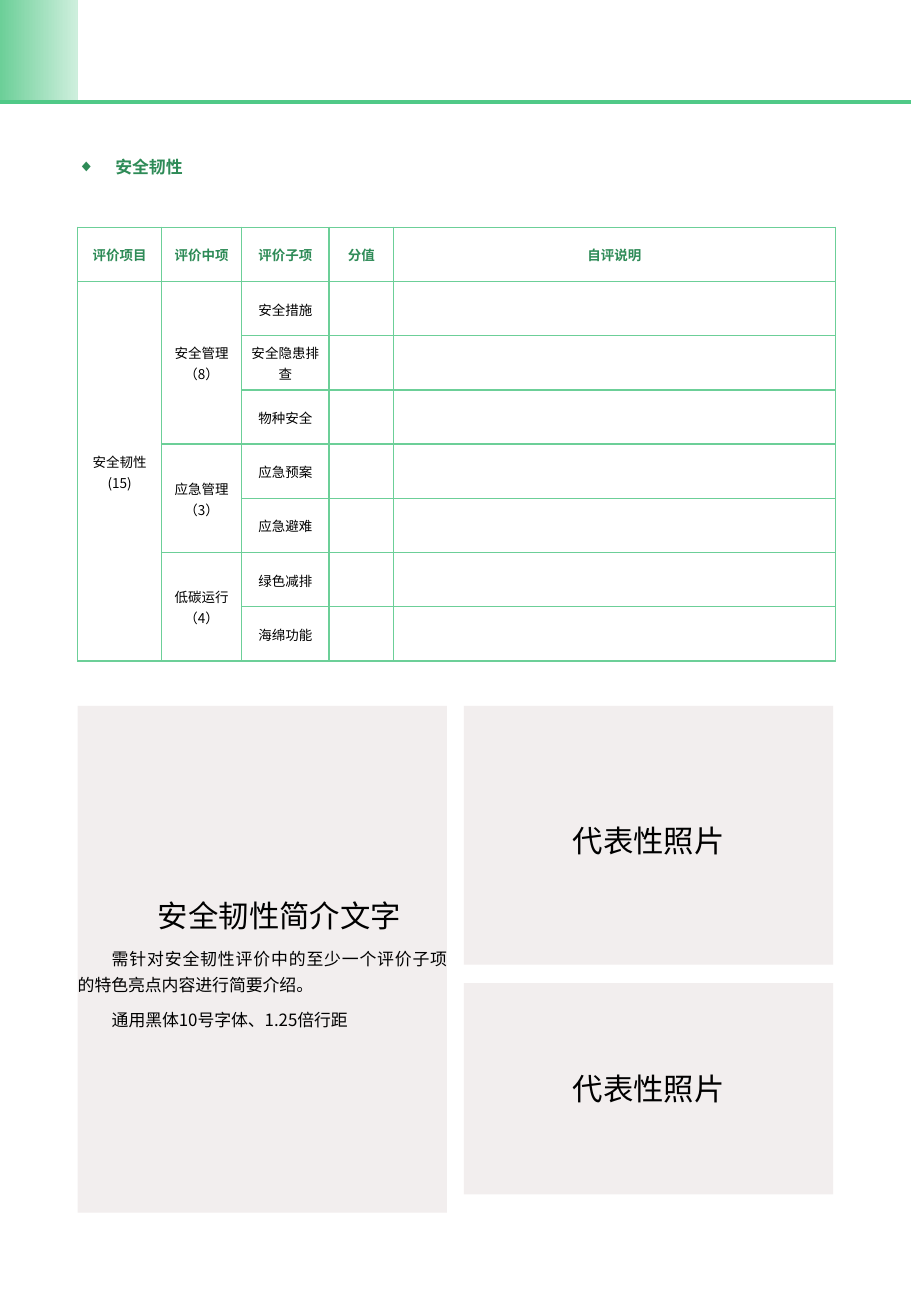
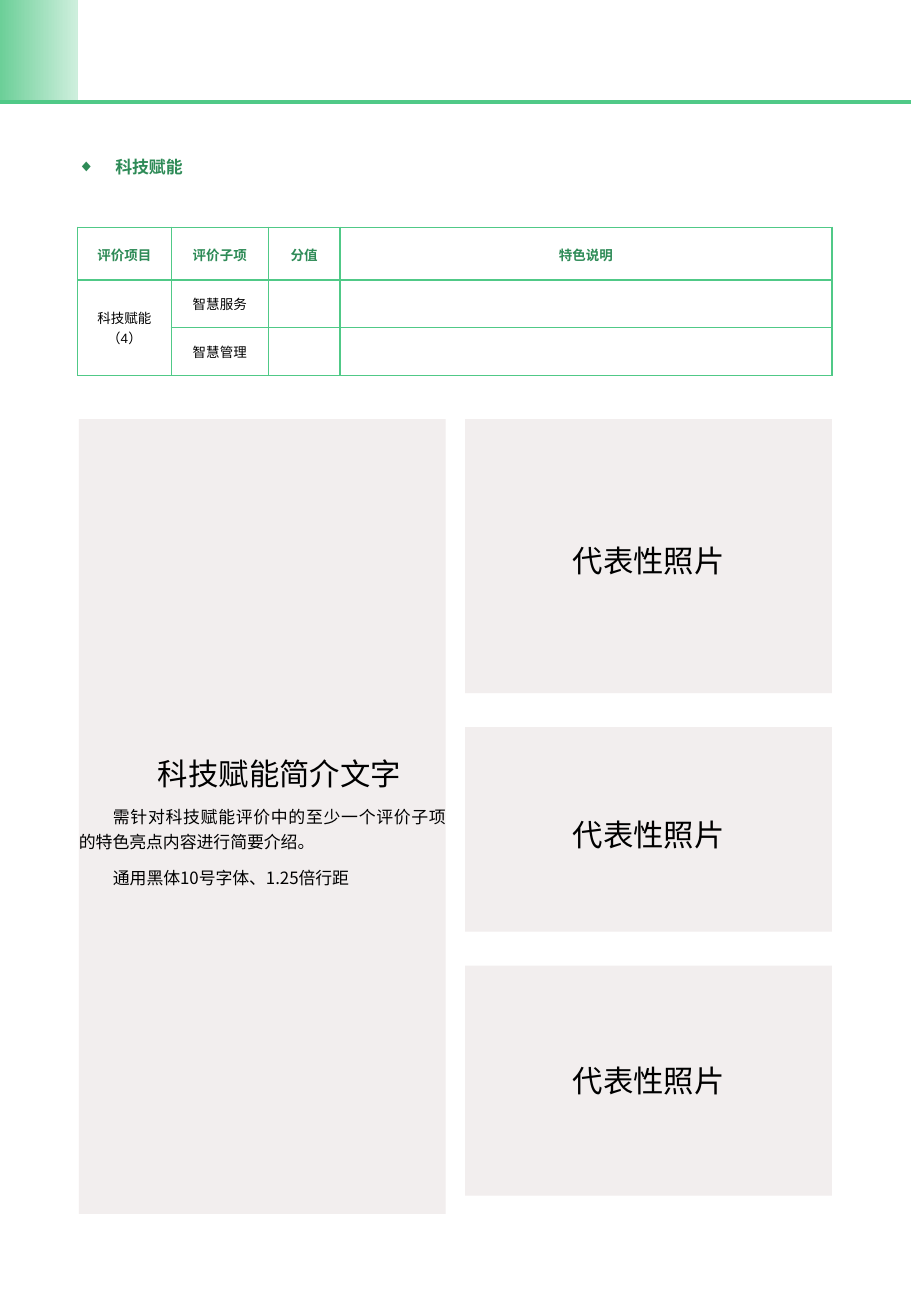
from lxml import etree
from pptx import Presentation
from pptx.dml.color import RGBColor
from pptx.enum.shapes import MSO_CONNECTOR, MSO_SHAPE
from pptx.enum.text import MSO_ANCHOR, MSO_AUTO_SIZE, PP_ALIGN
from pptx.oxml.ns import qn
from pptx.util import Inches, Pt

RECT = MSO_SHAPE.RECTANGLE
STRAIGHT = MSO_CONNECTOR.STRAIGHT
MIDDLE = MSO_ANCHOR.MIDDLE
GROW = MSO_AUTO_SIZE.SHAPE_TO_FIT_TEXT
CENTER, JUSTIFY = PP_ALIGN.CENTER, PP_ALIGN.JUSTIFY

PAGE_W, PAGE_H = 7.5, 10.83
MARGIN = 0.64
BAND_H = 0.84
TITLE_TOP, TABLE_TOP = 1.25, 1.87
PHOTO_INSET = 0.15
FONT, LATIN_FONT = "Noto Sans CJK SC", "Arial"
BLACK, TITLE_GREEN, RULE_GREEN = "000000", "2E8B57", "50C987"
BAND_GREEN, PALE_GREEN, PANEL = "6CCF98", "CEEFDD", "F2EEEE"

ZERO_INSETS = dict(margin_left=0, margin_right=0, margin_top=0, margin_bottom=0)
CELL_FORMAT = dict(margin_left=Inches(0.07), margin_right=Inches(0.07),
                   margin_top=Inches(0.05), margin_bottom=Inches(0.05),
                   vertical_anchor=MIDDLE)
SPACED = dict(line_spacing=1.25, space_after=Pt(6))
PHOTO_PLAIN = dict(alignment=CENTER)
PHOTO_SPACED = dict(alignment=CENTER, **SPACED)
INTRO_HEADING = dict(alignment=CENTER, **SPACED)
INTRO_BODY = dict(alignment=JUSTIFY, **SPACED)
TITLE_FORMAT = dict(alignment=JUSTIFY, line_spacing=1.25, space_after=Pt(12))


def color(value):
    return RGBColor.from_string(value)


def apply(target, settings):
    for key, value in settings.items():
        setattr(target, key, value)


def inches(box):
    return [Inches(length) for length in box]


def indent(paragraph, left, first):
    props = paragraph._p.get_or_add_pPr()
    props.set("marL", str(Inches(left)))
    props.set("indent", str(Inches(first)))


def write(paragraph, text, settings, size, ink=BLACK, bold=False, latin=FONT):
    apply(paragraph, settings)
    run = paragraph.add_run()
    run.text = text
    apply(run.font, dict(size=Pt(size), bold=bold, name=latin))
    run.font.color.rgb = color(ink)
    east_asian = etree.SubElement(run._r.get_or_add_rPr(), qn("a:ea"))
    east_asian.set("typeface", FONT)


def header_band(slide):
    band = slide.shapes.add_shape(RECT, *inches((0, 0, MARGIN, BAND_H)))
    band.shadow.inherit = False
    band.line.fill.background()
    band.fill.gradient()
    band.fill.gradient_angle = 0
    for stop, shade in zip(band.fill.gradient_stops, (BAND_GREEN, PALE_GREEN)):
        stop.color.rgb = color(shade)
    rule = slide.shapes.add_connector(
        STRAIGHT, *inches((-0.01, BAND_H, PAGE_W + 0.02, BAND_H)))
    rule.line.color.rgb = color(RULE_GREEN)
    rule.line.width = Pt(2.5)
    etree.SubElement(rule._element.spPr, qn("a:effectLst"))


def section_title(slide, box, text):
    frame = slide.shapes.add_textbox(*inches(box)).text_frame
    apply(frame, dict(word_wrap=True, auto_size=GROW, **ZERO_INSETS))
    paragraph = frame.paragraphs[0]
    indent(paragraph, 0.31, -0.31)
    props = paragraph._p.get_or_add_pPr()
    for tag, key, value in (("a:buFont", "typeface", LATIN_FONT),
                            ("a:buChar", "char", "◆")):
        etree.SubElement(props, qn(tag)).set(key, value)
    write(paragraph, text, TITLE_FORMAT, 10, TITLE_GREEN, True)


def border(cell, shade):
    props = cell._tc.get_or_add_tcPr()
    for side in ("L", "R", "T", "B"):
        edge = etree.SubElement(props, qn("a:ln" + side), w=str(Pt(1)))
        solid = etree.SubElement(edge, qn("a:solidFill"))
        etree.SubElement(solid, qn("a:srgbClr"), val=shade)


def fill_cell(cell, text, is_header, body):
    apply(cell, CELL_FORMAT)
    border(cell, body["edge"])
    cell.fill.background()
    frame = cell.text_frame
    if not text:
        end = etree.SubElement(frame.paragraphs[0]._p, qn("a:endParaRPr"))
        end.set("sz", "800")
        return
    spacing = 1.07 if is_header else body["spacing"]
    for number, line in enumerate(text.split("\n")):
        paragraph = frame.add_paragraph() if number else frame.paragraphs[0]
        write(paragraph, line, dict(alignment=CENTER, line_spacing=spacing), 8,
              TITLE_GREEN if is_header else BLACK, is_header,
              FONT if is_header else body["latin"])


def score_table(slide, box, col_weights, row_weights, rows, body):
    width, height = box[2:]
    table = slide.shapes.add_table(len(rows), len(col_weights), *inches(box)).table
    apply(table, dict(first_row=False, horz_banding=False))
    for column, weight in zip(table.columns, col_weights):
        column.width = Inches(width * weight / sum(col_weights))
    for row, weight in zip(table.rows, row_weights):
        row.height = Inches(height * weight / sum(row_weights))
    for r, texts in enumerate(rows):
        for c, text in enumerate(texts):
            fill_cell(table.cell(r, c), text, r == 0, body)
            last = r
            while text and last + 1 < len(rows) and rows[last + 1][c] is None:
                last += 1
            if last > r:
                table.cell(r, c).merge(table.cell(last, c))


def panel(slide, box):
    shape = slide.shapes.add_shape(RECT, *inches(box))
    shape.shadow.inherit = False
    shape.fill.solid()
    shape.fill.fore_color.rgb = color(PANEL)
    shape.line.fill.background()
    frame = shape.text_frame
    apply(frame, dict(word_wrap=True, vertical_anchor=MIDDLE, **ZERO_INSETS))
    return frame


def intro_panel(slide, box, topic):
    frame = panel(slide, box)
    lines = (
        (topic + "简介文字", INTRO_HEADING, 18),
        (f"需针对{topic}评价中的至少一个评价子项的特色亮点内容进行简要介绍。", INTRO_BODY, 10),
        ("通用黑体10号字体、1.25倍行距", INTRO_BODY, 10),
    )
    for number, (text, settings, size) in enumerate(lines):
        paragraph = frame.add_paragraph() if number else frame.paragraphs[0]
        indent(paragraph, 0, 0.28)
        write(paragraph, text, settings, size)


def photo_column(slide, box, weights, gap):
    left, top, width, height = box
    usable = height - gap * (len(weights) - 1)
    for number, weight in enumerate(weights, 1):
        photo_h = usable * weight / sum(weights)
        frame = panel(slide, (left, top, width, photo_h))
        settings = PHOTO_PLAIN if number == len(weights) else PHOTO_SPACED
        write(frame.paragraphs[0], "代表性照片", settings, 18)
        top += photo_h + gap


def showcase(slide, box, topic, gutter, photo_weights, photo_gap):
    left, top, width, height = box
    column = (width - gutter) / 2
    intro_panel(slide, (left, top, column, height), topic)
    photo_column(slide, (left + column + gutter, top, column, height - PHOTO_INSET),
                 photo_weights, photo_gap)


def evaluation_slide(deck, topic, title_w, table, panels):
    slide = deck.slides.add_slide(deck.slide_layouts[6])
    header_band(slide)
    section_title(slide, (MARGIN, TITLE_TOP, title_w, 0.19), topic)
    score_table(slide, **table)
    showcase(slide, topic=topic, **panels)


RESILIENCE = dict(
    topic="安全韧性", title_w=3.11,
    table=dict(
        box=(MARGIN, TABLE_TOP, 6.24, 3.57),
        col_weights=(0.69, 0.66, 0.72, 0.53, 3.64), row_weights=(1,) * 8,
        body=dict(edge=BAND_GREEN, spacing=1.07, latin=FONT),
        rows=(
            ("评价项目", "评价中项", "评价子项", "分值", "自评说明"),
            ("安全韧性(15)", "安全管理（8）", "安全措施", "", ""),
            (None, None, "安全隐患排查", "", ""),
            (None, None, "物种安全", "", ""),
            (None, "应急管理（3）", "应急预案", "", ""),
            (None, None, "应急避难", "", ""),
            (None, "低碳运行\n（4）", "绿色减排", "", ""),
            (None, None, "海绵功能", "", ""),
        )),
    panels=dict(box=(MARGIN, 5.81, 6.22, 4.17), gutter=0.14,
                photo_weights=(2.13, 1.74), photo_gap=0.15))

TECHNOLOGY = dict(
    topic="科技赋能", title_w=4.19,
    table=dict(
        box=(MARGIN, TABLE_TOP, 6.21, 1.22),
        col_weights=(0.77, 0.8, 0.59, 4.05), row_weights=(0.43, 0.39, 0.39),
        body=dict(edge=RULE_GREEN, spacing=1.0, latin=LATIN_FONT),
        rows=(
            ("评价项目", "评价子项", "分值", "特色说明"),
            ("科技赋能\n（4）", "智慧服务", "", ""),
            (None, "智慧管理", "", ""),
        )),
    panels=dict(box=(0.65, 3.45, 6.2, 6.54), gutter=0.16,
                photo_weights=(2.25, 1.68, 1.89), photo_gap=0.28))


def main():
    deck = Presentation()
    deck.slide_width, deck.slide_height = inches((PAGE_W, PAGE_H))
    for content in (RESILIENCE, TECHNOLOGY):
        evaluation_slide(deck, **content)
    deck.save("out.pptx")


if __name__ == "__main__":
    main()
